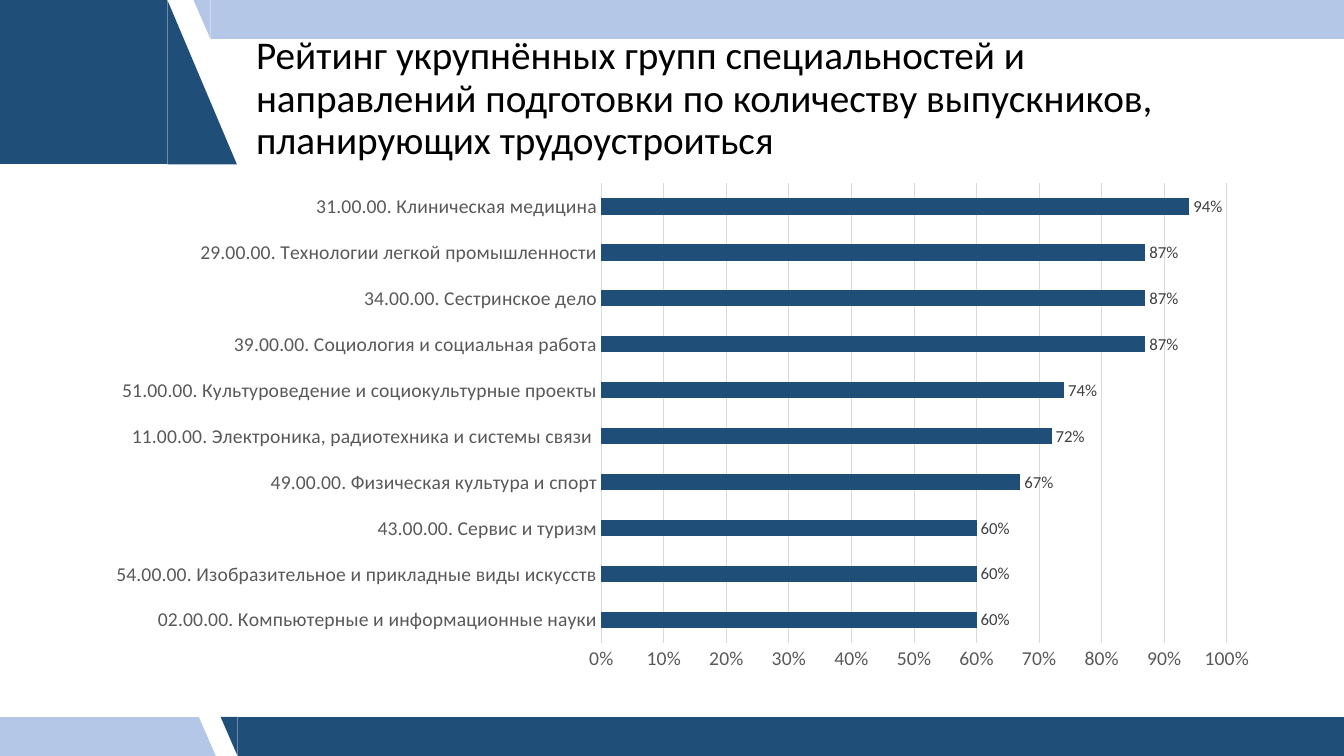
from pptx import Presentation
from pptx.chart.data import CategoryChartData
from pptx.dml.color import RGBColor
from pptx.enum.chart import XL_CHART_TYPE, XL_LABEL_POSITION, XL_TICK_MARK
from pptx.enum.shapes import MSO_SHAPE
from pptx.enum.text import MSO_ANCHOR, MSO_AUTO_SIZE, PP_ALIGN
from pptx.util import Pt

FACE = "Calibri"
NAVY, PALE, GRID, GREY = "1F4E79", "B4C7E7", "D9D9D9", "595959"
WIDE, HIGH = 960, 540
EDGE, TIP = 28, 12.2

TITLE = ("Рейтинг укрупнённых групп специальностей и направлений подготовки "
         "по количеству выпускников, планирующих трудоустроиться")
ROWS = [
    ("02.00.00. Компьютерные и информационные науки", 0.6),
    ("54.00.00. Изобразительное и прикладные виды искусств", 0.6),
    ("43.00.00. Сервис и туризм", 0.6),
    ("49.00.00. Физическая культура и спорт", 0.67),
    ("11.00.00. Электроника, радиотехника и системы связи ", 0.72),
    ("51.00.00. Культуроведение и социокультурные проекты", 0.74),
    ("39.00.00. Социология и социальная работа", 0.87),
    ("34.00.00. Сестринское дело", 0.87),
    ("29.00.00. Технологии легкой промышленности", 0.87),
    ("31.00.00. Клиническая медицина", 0.94),
]


def color(code):
    return RGBColor.from_string(code)


def style(font, size, code):
    font.name = FACE
    font.size = Pt(size)
    font.color.rgb = color(code)


def piece(slide, kind, box, code, turn):
    shape = slide.shapes.add_shape(kind, *map(Pt, box))
    shape.shadow.inherit = False
    shape.fill.solid()
    shape.fill.fore_color.rgb = color(code)
    shape.line.fill.background()
    shape.rotation = turn


def band(slide, left, top, width, height, tip, code, flip=False):
    """Bar with a slanted end: on the right, or on the left if flipped."""
    bar = left + tip if flip else left
    end = left if flip else left + width - tip
    turn = 180 if flip else 0
    piece(slide, MSO_SHAPE.FLOWCHART_PROCESS,
          (bar, top, width - tip, height), code, turn)
    piece(slide, MSO_SHAPE.RIGHT_TRIANGLE,
          (end, top, tip, height), code, turn)


def head(slide, text):
    title = slide.shapes.title
    title.left, title.top = Pt(175.7), Pt(36)
    title.width, title.height = Pt(720.7), Pt(70)
    frame = title.text_frame
    frame.word_wrap = True
    frame.auto_size = MSO_AUTO_SIZE.NONE
    frame.vertical_anchor = MSO_ANCHOR.MIDDLE
    para = frame.paragraphs[0]
    para.alignment = PP_ALIGN.LEFT
    para.line_spacing = 0.9
    run = para.add_run()
    run.text = text
    style(run.font, 28, "000000")


def rule(line):
    line.color.rgb = color(GRID)
    line.width = Pt(0.75)


def bars(slide, rows):
    data = CategoryChartData(number_format="0%")
    data.categories = [name for name, _ in rows]
    data.add_series("Series 1", [share for _, share in rows])
    chart = slide.shapes.add_chart(
        XL_CHART_TYPE.BAR_CLUSTERED,
        Pt(66.2), Pt(123.8), Pt(843), Pt(363), data).chart
    chart.has_legend = False
    chart.has_title = False
    style(chart.font, 10, "000000")

    # Axes
    for axis in (chart.category_axis, chart.value_axis):
        axis.major_tick_mark = XL_TICK_MARK.NONE
        axis.minor_tick_mark = XL_TICK_MARK.NONE
        style(axis.tick_labels.font, 14, GREY)
    chart.category_axis.has_major_gridlines = False
    rule(chart.category_axis.format.line)
    scale = chart.value_axis
    scale.minimum_scale, scale.maximum_scale = 0, 1
    scale.major_unit = 0.1
    scale.has_major_gridlines = True
    rule(scale.major_gridlines.format.line)
    scale.format.line.fill.background()
    scale.tick_labels.number_format = "0%"
    scale.tick_labels.number_format_is_linked = False

    # Bars and their labels
    plot = chart.plots[0]
    plot.vary_by_categories = False
    plot.gap_width = 182
    group = plot.series[0]
    group.format.fill.solid()
    group.format.fill.fore_color.rgb = color(NAVY)
    labels = group.data_labels
    labels.show_value = True
    labels.position = XL_LABEL_POSITION.OUTSIDE_END
    labels.number_format = "0%"
    labels.number_format_is_linked = False
    style(labels.font, 12, "404040")


def main():
    deck = Presentation()
    deck.slide_width, deck.slide_height = Pt(WIDE), Pt(HIGH)
    slide = deck.slides.add_slide(deck.slide_layouts[5])

    # Bottom and top bands, then the corner block
    base = HIGH - EDGE
    band(slide, 157.5, base, WIDE - 157.5, EDGE, TIP, NAVY, True)
    band(slide, 0, base, 154.2, EDGE, TIP, PALE)
    band(slide, 138.2, 0, WIDE - 138.2, EDGE, TIP, PALE, True)
    band(slide, 0, 0, 169.2, 117.4, 49.7, NAVY)

    head(slide, TITLE)
    bars(slide, ROWS)
    deck.save("out.pptx")


if __name__ == "__main__":
    main()
